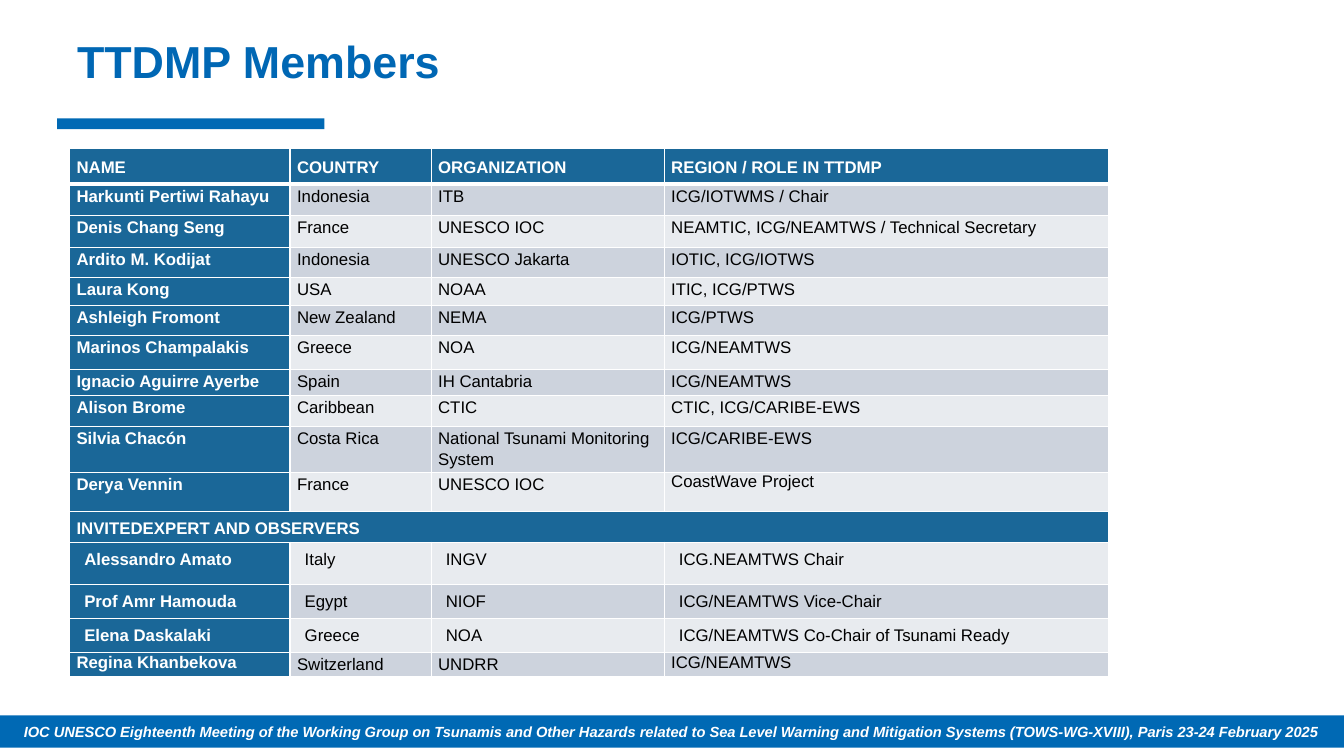
from lxml import etree
from pptx import Presentation
from pptx.dml.color import RGBColor
from pptx.enum import shapes, text
from pptx.oxml import ns
from pptx.util import Pt

TITLE = "TTDMP Members"
FOOTER = ("IOC UNESCO Eighteenth Meeting of the Working Group on Tsunamis and Other Hazards "
          "related to Sea Level Warning and Mitigation Systems (TOWS-WG-XVIII), "
          "Paris 23-24 February 2025")
HEADER = ("NAME", "COUNTRY", "ORGANIZATION", "REGION / ROLE IN TTDMP")
MEMBERS = [
    ("Harkunti Pertiwi Rahayu", "Indonesia", "ITB", "ICG/IOTWMS / Chair"),
    ("Denis Chang Seng", "France", "UNESCO IOC", "NEAMTIC, ICG/NEAMTWS / Technical Secretary"),
    ("Ardito M. Kodijat", "Indonesia", "UNESCO Jakarta", "IOTIC, ICG/IOTWS"),
    ("Laura Kong", "USA", "NOAA", "ITIC, ICG/PTWS"),
    ("Ashleigh Fromont", "New Zealand", "NEMA", "ICG/PTWS"),
    ("Marinos Champalakis", "Greece", "NOA", "ICG/NEAMTWS"),
    ("Ignacio Aguirre Ayerbe", "Spain", "IH Cantabria", "ICG/NEAMTWS"),
    ("Alison Brome", "Caribbean", "CTIC", "CTIC, ICG/CARIBE-EWS"),
    ("Silvia Chacón", "Costa Rica", "National Tsunami Monitoring System", "ICG/CARIBE-EWS"),
    ("Derya Vennin", "France", "UNESCO IOC", "CoastWave Project"),
]
SECTION = ("INVITEDEXPERT AND OBSERVERS", "", "", "")
OBSERVERS = [
    ("Alessandro Amato", "Italy", "INGV", "ICG.NEAMTWS Chair"),
    ("Prof Amr Hamouda", "Egypt", "NIOF", "ICG/NEAMTWS Vice-Chair"),
    ("Elena Daskalaki", "Greece", "NOA", "ICG/NEAMTWS Co-Chair of Tsunami Ready"),
    ("Regina Khanbekova", "Switzerland", "UNDRR", "ICG/NEAMTWS"),
]
ROWS = [HEADER, *MEMBERS, SECTION, *OBSERVERS]
SECTION_ROW = ROWS.index(SECTION)
LAST_ROW = len(ROWS) - 1
SINGLE_SPACED = {(SECTION_ROW - 1, 3), (LAST_ROW, 0), (LAST_ROW, 3)}

COLUMN_WIDTHS = (157.5, 100.8, 166.5, 317.5)
ROW_HEIGHTS = (25.5, 22.3, 23, 21.3, 20, 21.6, 24.5, 18.7,
               21.6, 33, 27.6, 22.3, 30, 24.5, 24.5, 15.8)

SLIDE_WIDTH, SLIDE_HEIGHT = 960, 540
FONT = "Arial"
BRAND_BLUE = RGBColor(0x00, 0x69, 0xB4)
TITLE_BLUE = RGBColor(0x00, 0x67, 0xB4)
TABLE_BLUE = RGBColor(0x1A, 0x67, 0x98)
BAND_DARK = RGBColor(0xCD, 0xD3, 0xDD)
BAND_LIGHT = RGBColor(0xE8, 0xEB, 0xEF)
WHITE = RGBColor(0xFF, 0xFF, 0xFF)
BLACK = RGBColor(0x00, 0x00, 0x00)


def style(paragraph, size, color, bold=True, italic=False):
    for run in paragraph.runs:
        font = run.font
        font.name, font.size, font.bold, font.italic = FONT, Pt(size), bold, italic
        font.color.rgb = color


def set_margins(area, horizontal, vertical):
    area.margin_left = area.margin_right = Pt(horizontal)
    area.margin_top = area.margin_bottom = Pt(vertical)


def add_bar(slide, left, top, width, height):
    bar = slide.shapes.add_shape(shapes.MSO_SHAPE.RECTANGLE,
                                 Pt(left), Pt(top), Pt(width), Pt(height))
    bar.shadow.inherit = False
    bar.fill.solid()
    bar.fill.fore_color.rgb = BRAND_BLUE
    bar.line.fill.background()
    return bar


def set_borders(cell, top, bottom):
    """White borders: 1 pt at the sides, the given widths above and below."""
    properties = cell._tc.get_or_add_tcPr()
    widths = {"L": 1, "R": 1, "T": top, "B": bottom}
    for position, (side, width) in enumerate(widths.items()):
        line = etree.Element(ns.qn(f"a:ln{side}"), w=str(Pt(width)))
        fill = etree.SubElement(line, ns.qn("a:solidFill"))
        etree.SubElement(fill, ns.qn("a:srgbClr"), val=str(WHITE))
        properties.insert(position, line)


def fill_cell(cell, row, column, wording):
    heading = row in (0, SECTION_ROW)
    on_blue = heading or column == 0
    indented = SECTION_ROW < row < LAST_ROW
    cell.fill.solid()
    cell.fill.fore_color.rgb = TABLE_BLUE if on_blue else BAND_DARK if row % 2 else BAND_LIGHT
    set_borders(cell, top=3 if row == 1 else 1, bottom=3 if row == 0 else 1)
    set_margins(cell, 5.5 if indented else 5, 3.6 if indented else 0)
    cell.vertical_anchor = text.MSO_ANCHOR.MIDDLE if heading else text.MSO_ANCHOR.TOP
    cell.text_frame.text = wording
    paragraph = cell.text_frame.paragraphs[0]
    if (row, column) not in SINGLE_SPACED:
        paragraph.line_spacing = 1.15
    if indented:
        paragraph._p.get_or_add_pPr().set("marL", str(Pt(5)))
    style(paragraph, 12, WHITE if on_blue else BLACK, bold=on_blue)


def add_members_table(slide):
    table = slide.shapes.add_table(len(ROWS), len(HEADER), Pt(49.7), Pt(106),
                                   Pt(sum(COLUMN_WIDTHS)), Pt(sum(ROW_HEIGHTS))).table
    for column, width in zip(table.columns, COLUMN_WIDTHS):
        column.width = Pt(width)
    for row, height in zip(table.rows, ROW_HEIGHTS):
        row.height = Pt(height)
    for row, entries in enumerate(ROWS):
        for column, wording in enumerate(entries):
            fill_cell(table.cell(row, column), row, column, wording)
    table.cell(SECTION_ROW, 0).merge(table.cell(SECTION_ROW, len(HEADER) - 1))


def main():
    deck = Presentation()
    deck.slide_width, deck.slide_height = Pt(SLIDE_WIDTH), Pt(SLIDE_HEIGHT)
    slide = deck.slides.add_slide(deck.slide_layouts[6])

    add_bar(slide, 40.8, 84.5, 191, 7.7)
    footer = add_bar(slide, 0, 511, SLIDE_WIDTH, 23).text_frame
    footer.word_wrap = True
    set_margins(footer, 5, 5)
    footer.vertical_anchor = text.MSO_ANCHOR.MIDDLE
    footer.text = FOOTER
    footer.paragraphs[0].alignment = text.PP_ALIGN.CENTER
    style(footer.paragraphs[0], 10.5, WHITE, italic=True)

    title = slide.shapes.add_textbox(Pt(48), Pt(0), Pt(864), Pt(87)).text_frame
    title.word_wrap = True
    title.vertical_anchor = text.MSO_ANCHOR.MIDDLE
    title.text = TITLE
    style(title.paragraphs[0], 32, TITLE_BLUE)

    add_members_table(slide)
    deck.save("out.pptx")


if __name__ == "__main__":
    main()
